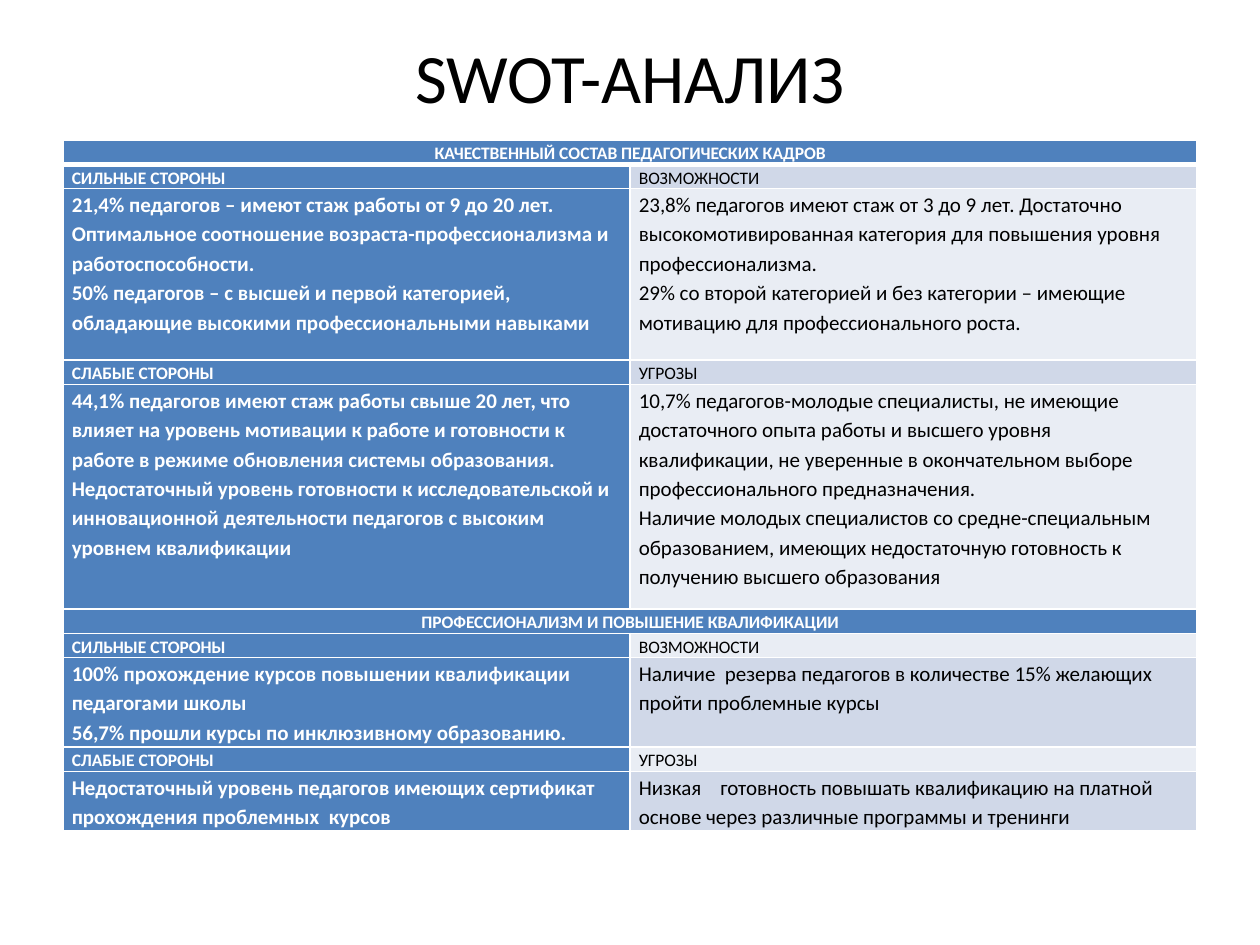
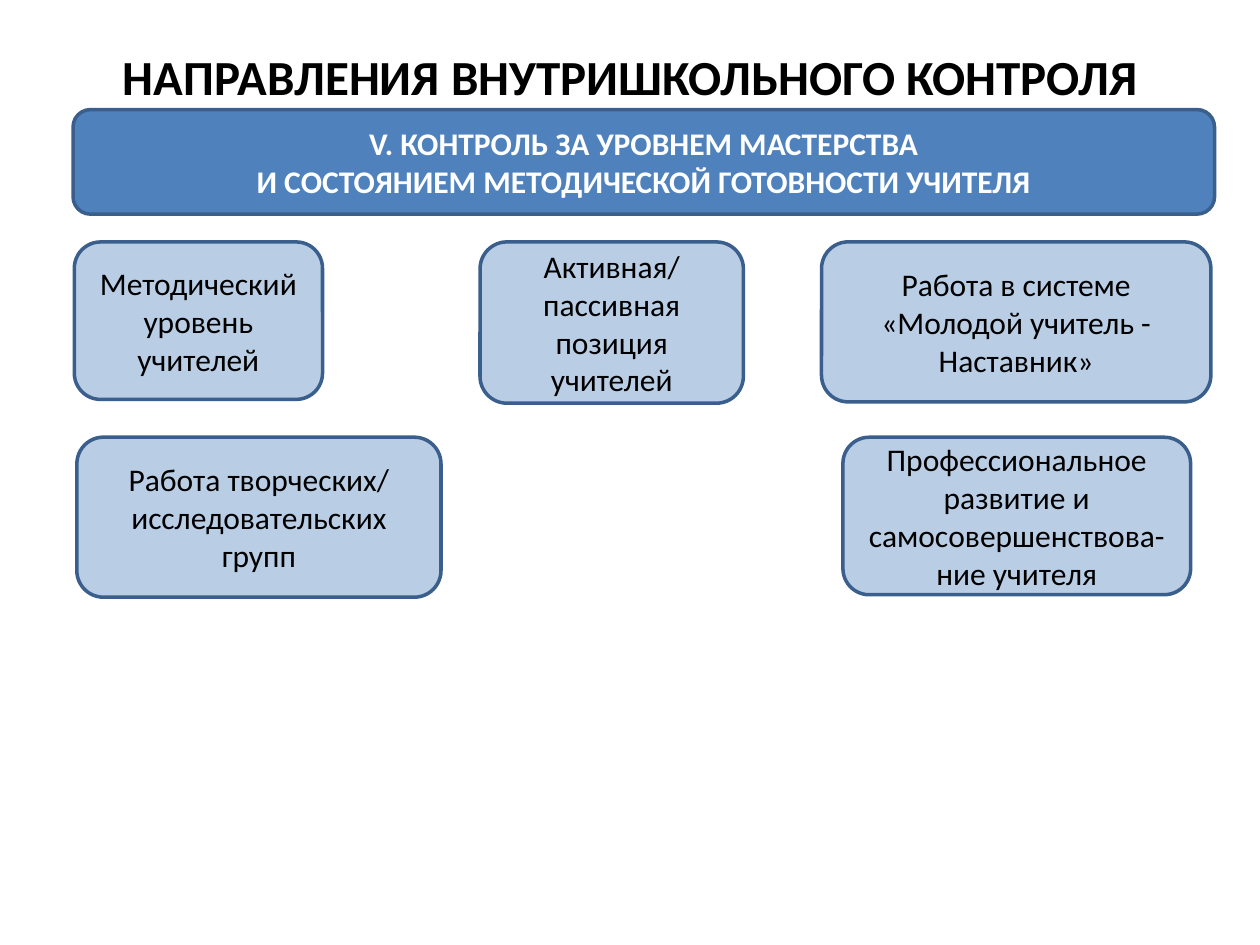
from lxml import etree
from pptx import Presentation
from pptx import util as u
from pptx.dml.color import RGBColor
from pptx.enum import shapes, text
from pptx.oxml import ns

FONT = "Calibri"
BLACK = RGBColor(0x00, 0x00, 0x00)
WHITE = RGBColor(0xFF, 0xFF, 0xFF)
BLUE = RGBColor(0x4F, 0x81, 0xBD)
OUTLINE = RGBColor(0x3A, 0x5F, 0x8C)
PALE_BLUE = RGBColor(0xB9, 0xCD, 0xE5)
BAND_DARK = RGBColor(0xD0, 0xD8, 0xE8)
BAND_LIGHT = RGBColor(0xE9, 0xED, 0xF4)

TITLE_BOX = (0.5, 0.3, 9, 0.61)
TABLE_BOX = (0.5, 1.11, 9, 5.43)
SCHEME_BOX = (0.58, 0.87, 9.06, 3.87)

BANNER_HEIGHT = 0.18
STRENGTHS = ("СИЛЬНЫЕ СТОРОНЫ", "ВОЗМОЖНОСТИ")
WEAKNESSES = ("СЛАБЫЕ СТОРОНЫ", "УГРОЗЫ")

SWOT_ROWS = [
    (BANNER_HEIGHT, ("КАЧЕСТВЕННЫЙ СОСТАВ ПЕДАГОГИЧЕСКИХ КАДРОВ",)),
    (BANNER_HEIGHT, STRENGTHS),
    (1.36, (
        "21,4% педагогов – имеют стаж работы от 9 до 20 лет. Оптимальное соотношение "
        "возраста-профессионализма и работоспособности.\n"
        "50% педагогов – с высшей и первой категорией, обладающие высокими "
        "профессиональными навыками",
        "23,8% педагогов имеют стаж от 3 до 9 лет. Достаточно высокомотивированная "
        "категория для повышения уровня профессионализма.\n"
        "29% со второй категорией и без категории – имеющие мотивацию для "
        "профессионального роста.")),
    (BANNER_HEIGHT, WEAKNESSES),
    (1.78, (
        "44,1% педагогов имеют стаж работы свыше 20 лет, что влияет на уровень мотивации "
        "к работе и готовности к работе в режиме обновления системы образования.\n"
        "Недостаточный уровень готовности к исследовательской и инновационной "
        "деятельности педагогов с высоким уровнем квалификации",
        "10,7% педагогов-молодые специалисты, не имеющие достаточного опыта работы и "
        "высшего уровня квалификации, не уверенные в окончательном выборе "
        "профессионального предназначения.\n"
        "Наличие молодых специалистов со средне-специальным образованием, имеющих "
        "недостаточную готовность к получению высшего образования")),
    (BANNER_HEIGHT, ("ПРОФЕССИОНАЛИЗМ И ПОВЫШЕНИЕ КВАЛИФИКАЦИИ",)),
    (BANNER_HEIGHT, STRENGTHS),
    (0.71, (
        "100% прохождение курсов повышении квалификации педагогами школы\n"
        "56,7% прошли курсы по инклюзивному образованию.",
        "Наличие  резерва педагогов в количестве 15% желающих пройти проблемные курсы")),
    (BANNER_HEIGHT, WEAKNESSES),
    (0.47, (
        "Недостаточный уровень педагогов имеющих сертификат прохождения проблемных  курсов",
        "Низкая    готовность повышать квалификацию на платной основе через различные "
        "программы и тренинги")),
]

BANNER_TEXT = "V. КОНТРОЛЬ ЗА УРОВНЕМ МАСТЕРСТВА\nИ СОСТОЯНИЕМ МЕТОДИЧЕСКОЙ ГОТОВНОСТИ УЧИТЕЛЯ"
DIRECTION_ROWS = [
    (1.05, [
        (0.01, 1.97, 1.25, "Методический уровень учителей"),
        (3.23, 2.09, 1.28, "Активная/пассивная позиция учителей"),
        (5.94, 3.09, 1.27, "Работа в системе «Молодой учитель - Наставник»"),
    ]),
    (2.6, [
        (0.03, 2.89, 1.27, "Работа творческих/\nисследовательских групп"),
        (6.11, 2.76, 1.25, "Профессиональное развитие и самосовершенствова-ние учителя"),
    ]),
]


def write(tf, content, size, color, bold=False, align=text.PP_ALIGN.CENTER, spacing=None):
    """Fill a text frame and format every paragraph alike."""
    tf.text = content
    tf.word_wrap = True
    for p in tf.paragraphs:
        p.alignment = align
        if spacing:
            p.line_spacing = spacing
        for r in p.runs:
            r.font.name = FONT
            r.font.size = u.Pt(size)
            r.font.bold = bold
            r.font.color.rgb = color


def add_titled_slide(prs, title, size, bold=False):
    """Add a title-only slide with the shared title style."""
    s = prs.slides.add_slide(prs.slide_layouts[5])
    sp = s.shapes.title
    sp.left, sp.top, sp.width, sp.height = map(u.Inches, TITLE_BOX)
    tf = sp.text_frame
    write(tf, title, size, BLACK, bold)
    tf.vertical_anchor = text.MSO_ANCHOR.MIDDLE
    tf.auto_size = text.MSO_AUTO_SIZE.NONE
    return s


def set_borders(cell, top, bottom):
    """Draw white cell borders, with the given top and bottom widths in points."""
    tc_pr = cell._tc.get_or_add_tcPr()
    for side, width in (("L", 1), ("R", 1), ("T", top), ("B", bottom)):
        ln = etree.SubElement(tc_pr, ns.qn(f"a:ln{side}"), w=str(u.Pt(width)))
        fill = etree.SubElement(ln, ns.qn("a:solidFill"))
        etree.SubElement(fill, ns.qn("a:srgbClr"), val=str(WHITE))


def add_swot_table(s, box):
    """Place the SWOT table with its merged section banners in a box."""
    left, top, width, height = map(u.Inches, box)
    table = s.shapes.add_table(len(SWOT_ROWS), 2, left, top, width, height).table
    table.first_row = table.horz_banding = False
    for column in table.columns:
        column.width = width // 2
    for i, (row_height, contents) in enumerate(SWOT_ROWS):
        table.rows[i].height = u.Inches(row_height)
        is_section = len(contents) == 1
        if is_section:
            table.cell(i, 0).merge(table.cell(i, 1))
        for j, cell in enumerate(table.rows[i].cells):
            set_borders(cell, 3 if i == 1 else 1, 3 if i == 0 else 1)
            cell.margin_left = cell.margin_right = u.Inches(0.07)
            cell.margin_top = cell.margin_bottom = 0
            band = BAND_DARK if i % 2 else BAND_LIGHT
            cell.fill.solid()
            cell.fill.fore_color.rgb = BLUE if j == 0 or is_section else band
            if j < len(contents):
                write(cell.text_frame, contents[j],
                      10 if row_height == BANNER_HEIGHT else 12,
                      BLACK if j else WHITE, bold=j == 0,
                      align=text.PP_ALIGN.CENTER if is_section else text.PP_ALIGN.LEFT,
                      spacing=1.15)


def add_rounded_box(s, box, content, fill, color, bold=False):
    """Add an outlined rounded box with centred text."""
    sp = s.shapes.add_shape(shapes.MSO_SHAPE.ROUNDED_RECTANGLE, *map(u.Inches, box))
    sp.shadow.inherit = False
    sp.fill.solid()
    sp.fill.fore_color.rgb = fill
    sp.line.color.rgb = OUTLINE
    sp.line.width = u.Pt(2)
    write(sp.text_frame, content, 18, color, bold)
    sp.text_frame.vertical_anchor = text.MSO_ANCHOR.MIDDLE


def add_control_scheme(s, box):
    """Place the banner and the rows of control directions in a box."""
    left, top, width, _ = box
    add_rounded_box(s, (left, top, width, 0.83), BANNER_TEXT, BLUE, WHITE, bold=True)
    for dy, directions in DIRECTION_ROWS:
        for dx, w, h, content in directions:
            add_rounded_box(s, (left + dx, top + dy, w, h), content, PALE_BLUE, BLACK)


def main():
    """Build and save both slides."""
    prs = Presentation()
    prs.slide_width, prs.slide_height = u.Inches(10), u.Inches(7.5)
    add_swot_table(add_titled_slide(prs, "SWOT-АНАЛИЗ", 39.6), TABLE_BOX)
    s = add_titled_slide(prs, "НАПРАВЛЕНИЯ ВНУТРИШКОЛЬНОГО КОНТРОЛЯ", 28, bold=True)
    add_control_scheme(s, SCHEME_BOX)
    prs.save("out.pptx")


if __name__ == "__main__":
    main()
